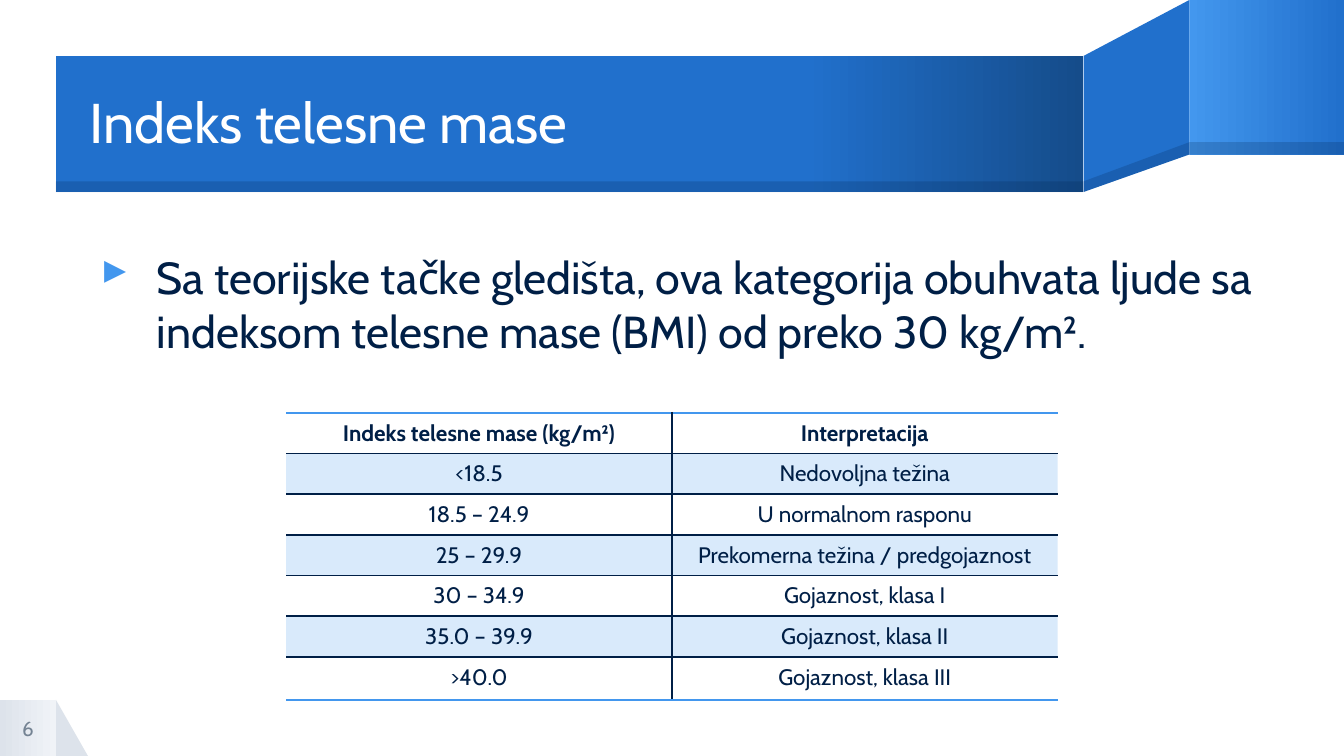
import pptx
import pptx.util
import pptx.dml.color
import pptx.enum.shapes
import pptx.enum.text
import pptx.oxml
import pptx.oxml.ns
from lxml import etree

WIDTH, HEIGHT = pptx.util.Inches(10), pptx.util.Inches(5.625)
UNIT = WIDTH / 24  # the grid is square: 24 columns by 13.5 rows
ROWS = 13.5

NAVY, BLUE, SKY, DEEP = "001F46", "2170CC", "4397EE", "154C8A"
WHITE, GREY, MIST, PALE = "FFFFFF", "748393", "DDE3EB", "F0F3F7"

FOLD_LEFT, FOLD_RIGHT = 19.35, 21.24
BANNER_BOTTOM, WING_BOTTOM = 3.43, 2.76
BANNER_EDGE, WING_EDGE = 3.24, 2.54
TABLE_LEFT, TABLE_TOP = 5.11, 7.37
ROW_HEIGHT, LAST_ROW_HEIGHT = 0.727, 0.77

BMI_CLASSES = [
    ("Indeks telesne mase (kg/m²)", "Interpretacija"),
    ("<18.5", "Nedovoljna težina"),
    ("18.5 – 24.9", "U normalnom rasponu"),
    ("25 – 29.9", "Prekomerna težina / predgojaznost"),
    ("30 – 34.9", "Gojaznost, klasa I"),
    ("35.0 – 39.9", "Gojaznost, klasa II"),
    (">40.0", "Gojaznost, klasa III"),
]

SHAPES = pptx.enum.shapes.MSO_SHAPE
ANCHOR = pptx.enum.text.MSO_ANCHOR
ALIGN = pptx.enum.text.PP_ALIGN


def grid(cells):
    return round(cells * UNIT)


def color(hex_value):
    return pptx.dml.color.RGBColor.from_string(hex_value)


def add_child(parent, tag, **attributes):
    child = etree.SubElement(parent, pptx.oxml.ns.qn(tag))
    for key, value in attributes.items():
        child.set(key, str(value))
    return child


def fill_solid(fill, hex_value, owner=None, opacity=100):
    """Fill with one colour; owner is the XML that holds a see-through fill."""
    fill.solid()
    fill.fore_color.rgb = color(hex_value)
    if opacity < 100:
        solid = owner.find(pptx.oxml.ns.qn("a:solidFill"))
        add_child(solid[0], "a:alpha", val=opacity * 1000)


def fill_gradient(shape, stops):
    """Fill from left to right with (percent, colour) stops."""
    shape.fill.gradient()
    shape.fill.gradient_angle = 0
    stop_list = shape._element.spPr.find(".//" + pptx.oxml.ns.qn("a:gsLst"))
    for old_stop in list(stop_list):
        stop_list.remove(old_stop)
    for percent, hex_value in stops:
        stop = add_child(stop_list, "a:gs", pos=percent * 1000)
        add_child(stop, "a:srgbClr", val=hex_value)


def paint(shape, paint_value, opacity=100):
    shape.shadow.inherit = False
    shape.line.fill.background()
    if isinstance(paint_value, list):
        fill_gradient(shape, paint_value)
    else:
        fill_solid(shape.fill, paint_value, shape._element.spPr, opacity)


def add_block(slide, kind, box, paint_value, opacity=100):
    shape = slide.shapes.add_shape(kind, *map(grid, box))
    paint(shape, paint_value, opacity)


def add_fold(slide, corners, hex_value, opacity=100):
    points = [(grid(x), grid(y)) for x, y in corners]
    builder = slide.shapes.build_freeform(*points[0], scale=1.0)
    builder.add_line_segments(points[1:], close=True)
    paint(builder.convert_to_shape(), hex_value, opacity)


def write(paragraph, text, hex_value, size, bold=False):
    run = paragraph.add_run()
    run.text = text
    font_format = {"name": "Cabin", "size": pptx.util.Pt(size), "bold": bold}
    for key, value in font_format.items():
        setattr(run.font, key, value)
    run.font.color.rgb = color(hex_value)


def add_text(slide, box, text, hex_value, size, anchor=ANCHOR.MIDDLE, align=ALIGN.LEFT):
    frame = slide.shapes.add_textbox(*map(grid, box)).text_frame
    frame_format = {"word_wrap": True, "vertical_anchor": anchor, "margin_left": 0,
                    "margin_top": 0, "margin_right": 0, "margin_bottom": 0}
    for key, value in frame_format.items():
        setattr(frame, key, value)
    paragraph = frame.paragraphs[0]
    paragraph.alignment = align
    write(paragraph, text, hex_value, size)
    return paragraph


def add_bullet(paragraph, symbol, hex_value):
    properties = paragraph._p.get_or_add_pPr()
    properties.set("marL", str(pptx.util.Inches(0.5)))
    properties.set("indent", str(pptx.util.Inches(-0.42)))
    add_child(add_child(properties, "a:buClr"), "a:srgbClr", val=hex_value)
    add_child(properties, "a:buChar", char=symbol)


def set_borders(cell, sides):
    """Draw the left, right, top and bottom borders; None leaves a side open."""
    properties = cell._tc.get_or_add_tcPr()
    for side, hex_value in zip("LRTB", sides):
        line = add_child(properties, f"a:ln{side}", w=pptx.util.Pt(1))
        if hex_value:
            add_child(add_child(line, "a:solidFill"), "a:srgbClr", val=hex_value)
        else:
            add_child(line, "a:noFill")


def add_bmi_table(slide):
    last = len(BMI_CLASSES) - 1
    box = (TABLE_LEFT, TABLE_TOP, 24 - 2 * TABLE_LEFT,
           last * ROW_HEIGHT + LAST_ROW_HEIGHT)
    table = slide.shapes.add_table(last + 1, 2, *map(grid, box)).table
    table.first_row = table.horz_banding = False
    for r, labels in enumerate(BMI_CLASSES):
        table.rows[r].height = grid(LAST_ROW_HEIGHT if r == last else ROW_HEIGHT)
        for c, label in enumerate(labels):
            cell = table.cell(r, c)
            set_borders(cell, (NAVY if c else None, None if c else NAVY,
                               NAVY if r else SKY, SKY if r == last else NAVY))
            if r % 2:
                fill_solid(cell.fill, SKY, cell._tc.tcPr, 20)
            else:
                cell.fill.background()
            paragraph = cell.text_frame.paragraphs[0]
            paragraph.alignment = ALIGN.CENTER
            write(paragraph, label, NAVY, 12, bold=r == 0)


def add_ribbon(slide):
    banner_width, wing_width = FOLD_LEFT - 1, 24 - FOLD_RIGHT
    add_fold(slide, [(FOLD_RIGHT, 0), (FOLD_LEFT, 1), (FOLD_LEFT, BANNER_BOTTOM),
                     (FOLD_RIGHT, WING_BOTTOM)], BLUE)
    add_block(slide, SHAPES.RECTANGLE, (FOLD_RIGHT, 0, wing_width, WING_BOTTOM),
              [(0, SKY), (100, BLUE)])
    add_block(slide, SHAPES.RECTANGLE, (1, 1, banner_width, BANNER_BOTTOM - 1),
              [(0, BLUE), (73, BLUE), (100, DEEP)])
    add_fold(slide, [(FOLD_RIGHT, WING_EDGE), (FOLD_LEFT, BANNER_EDGE),
                     (FOLD_LEFT, BANNER_BOTTOM), (FOLD_RIGHT, WING_BOTTOM)], NAVY, 20)
    for left, top, width, bottom in ((FOLD_RIGHT, WING_EDGE, wing_width, WING_BOTTOM),
                                     (1, BANNER_EDGE, banner_width, BANNER_BOTTOM)):
        add_block(slide, SHAPES.RECTANGLE, (left, top, width, bottom - top), NAVY, 20)


def add_page_number(slide, number):
    corner = (0, ROWS - 1, 1, 1)
    add_block(slide, SHAPES.RIGHT_TRIANGLE, (1, ROWS - 1, 0.57, 1), MIST)
    add_block(slide, SHAPES.RECTANGLE, corner, [(0, MIST), (100, PALE)])
    add_text(slide, corner, number, GREY, 11, align=ALIGN.CENTER)


def main():
    deck = pptx.Presentation()
    deck.slide_width, deck.slide_height = WIDTH, HEIGHT
    slide = deck.slides.add_slide(deck.slide_layouts[6])
    add_ribbon(slide)
    title = add_text(slide, (1.6, 1.03, 17.75, 2.42), "Indeks telesne mase", WHITE, 30)
    title.line_spacing = 0.9
    definition = add_text(
        slide, (1.6, 4.46, 22.1, 7.42),
        "Sa teorijske tačke gledišta, ova kategorija obuhvata ljude sa "
        "indeksom telesne mase (BMI) od preko 30 kg/m².", NAVY, 24, ANCHOR.TOP)
    add_bullet(definition, "▸", SKY)
    add_bmi_table(slide)
    add_page_number(slide, "6")
    deck.save("out.pptx")


if __name__ == "__main__":
    main()
